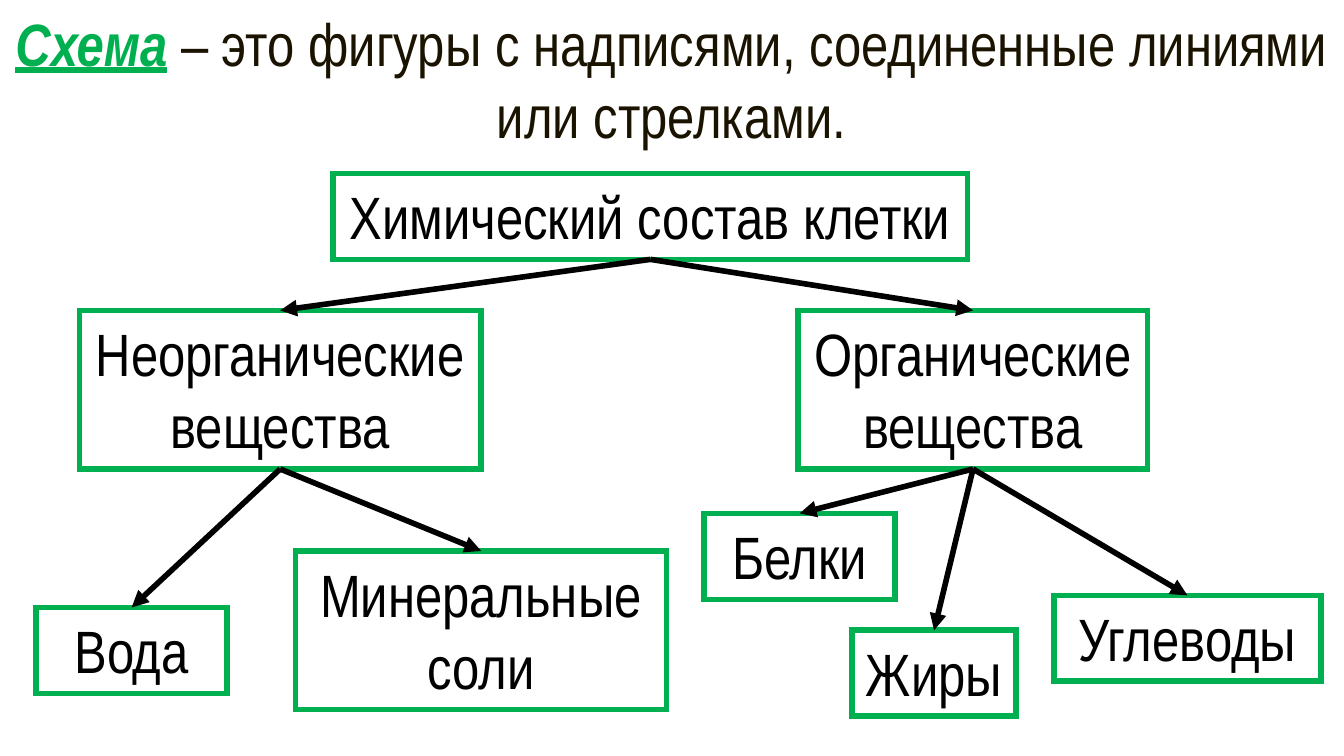
from dataclasses import dataclass

from lxml.etree import SubElement
from pptx import Presentation
from pptx.dml.color import RGBColor
from pptx.enum.shapes import MSO_CONNECTOR, MSO_SHAPE
from pptx.enum.text import MSO_ANCHOR, MSO_AUTO_SIZE, PP_ALIGN
from pptx.oxml.ns import qn
from pptx.util import Inches, Pt


@dataclass(frozen=True)
class Theme:
    font: str = "Arial Narrow"
    size: int = 32
    line_width: int = 3
    green: RGBColor = RGBColor(0x00, 0xB0, 0x50)
    brown: RGBColor = RGBColor(0x1A, 0x13, 0x00)
    black: RGBColor = RGBColor(0x00, 0x00, 0x00)


# Connection sites of a rectangle
TOP, BOTTOM = 0, 2
# Box heights by number of text lines
HEIGHT = {1: 0.64, 2: 1.18}


class SchemeSlide:
    def __init__(self, slide, theme):
        self.slide = slide
        self.theme = theme

    def style_run(self, r, color, bold=False, italic=False, underline=False):
        f = r.font
        f.name, f.size = self.theme.font, Pt(self.theme.size)
        f.color.rgb = color
        f.bold, f.italic, f.underline = bold, italic, underline

    def style_frame(self, tf, wrap=True):
        tf.word_wrap = wrap
        tf.auto_size = MSO_AUTO_SIZE.SHAPE_TO_FIT_TEXT
        tf.vertical_anchor = MSO_ANCHOR.TOP
        tf.paragraphs[0].alignment = PP_ALIGN.CENTER

    def style_line(self, line, color):
        line.color.rgb = color
        line.width = Pt(self.theme.line_width)

    def title(self, term, definition, left, top, width, height):
        sp = self.slide.shapes.title
        sp.left, sp.top = Inches(left), Inches(top)
        sp.width, sp.height = Inches(width), Inches(height)
        self.style_frame(sp.text_frame)
        p = sp.text_frame.paragraphs[0]
        for text, color, bold, slanted in (
                (term, self.theme.green, True, True),
                (" ", self.theme.brown, True, False),
                (definition, self.theme.brown, False, False)):
            r = p.add_run()
            r.text = text
            self.style_run(r, color, bold, slanted, slanted)

    def box(self, text, left, top, width, lines=1, wrap=True):
        sp = self.slide.shapes.add_shape(
            MSO_SHAPE.RECTANGLE, Inches(left), Inches(top),
            Inches(width), Inches(HEIGHT[lines]))
        sp.shadow.inherit = False
        sp.fill.background()
        self.style_line(sp.line, self.theme.green)
        # Square corners
        SubElement(sp._element.spPr.find(qn("a:ln")), qn("a:miter"), lim="800000")
        tf = sp.text_frame
        tf.text = text
        self.style_frame(tf, wrap)
        self.style_run(tf.paragraphs[0].runs[0], self.theme.black)
        return sp

    def arrow(self, parent, child):
        cn = self.slide.shapes.add_connector(MSO_CONNECTOR.STRAIGHT, 0, 0, 0, 0)
        cn.begin_connect(parent, BOTTOM)
        cn.end_connect(child, TOP)
        self.style_line(cn.line, self.theme.black)
        spPr = cn._element.spPr
        SubElement(spPr.find(qn("a:ln")), qn("a:tailEnd"), type="triangle")
        SubElement(spPr, qn("a:effectLst"))


def main():
    prs = Presentation()
    # Widescreen, 16:9
    prs.slide_width = Inches(10)
    prs.slide_height = prs.slide_width * 9 // 16
    layout = prs.slide_layouts.get_by_name("Title Only")
    s = SchemeSlide(prs.slides.add_slide(layout), Theme())

    # Definition
    s.title("Схема", "– это фигуры с надписями, соединенные линиями или стрелками.",
            0, 0, 10, 1.18)

    # Root and its two branches
    root = s.box("Химический состав клетки", 2.48, 1.29, 4.72, wrap=False)
    inorganic = s.box("Неорганические вещества", 0.59, 2.31, 2.99, lines=2)
    organic = s.box("Органические вещества", 5.94, 2.31, 2.6, lines=2)

    # Substances of each branch
    water = s.box("Вода", 0.27, 4.52, 1.42)
    salts = s.box("Минеральные соли", 2.2, 4.1, 2.76, lines=2)
    proteins = s.box("Белки", 5.24, 3.82, 1.42)
    fats = s.box("Жиры", 6.34, 4.69, 1.22)
    carbohydrates = s.box("Углеводы", 7.84, 4.43, 1.99)

    # Arrows from each parent to its children
    tree = [
        (root, [organic, inorganic]),
        (inorganic, [water, salts]),
        (organic, [proteins, fats, carbohydrates]),
    ]
    for parent, children in tree:
        for child in children:
            s.arrow(parent, child)

    prs.save("out.pptx")


if __name__ == "__main__":
    main()
